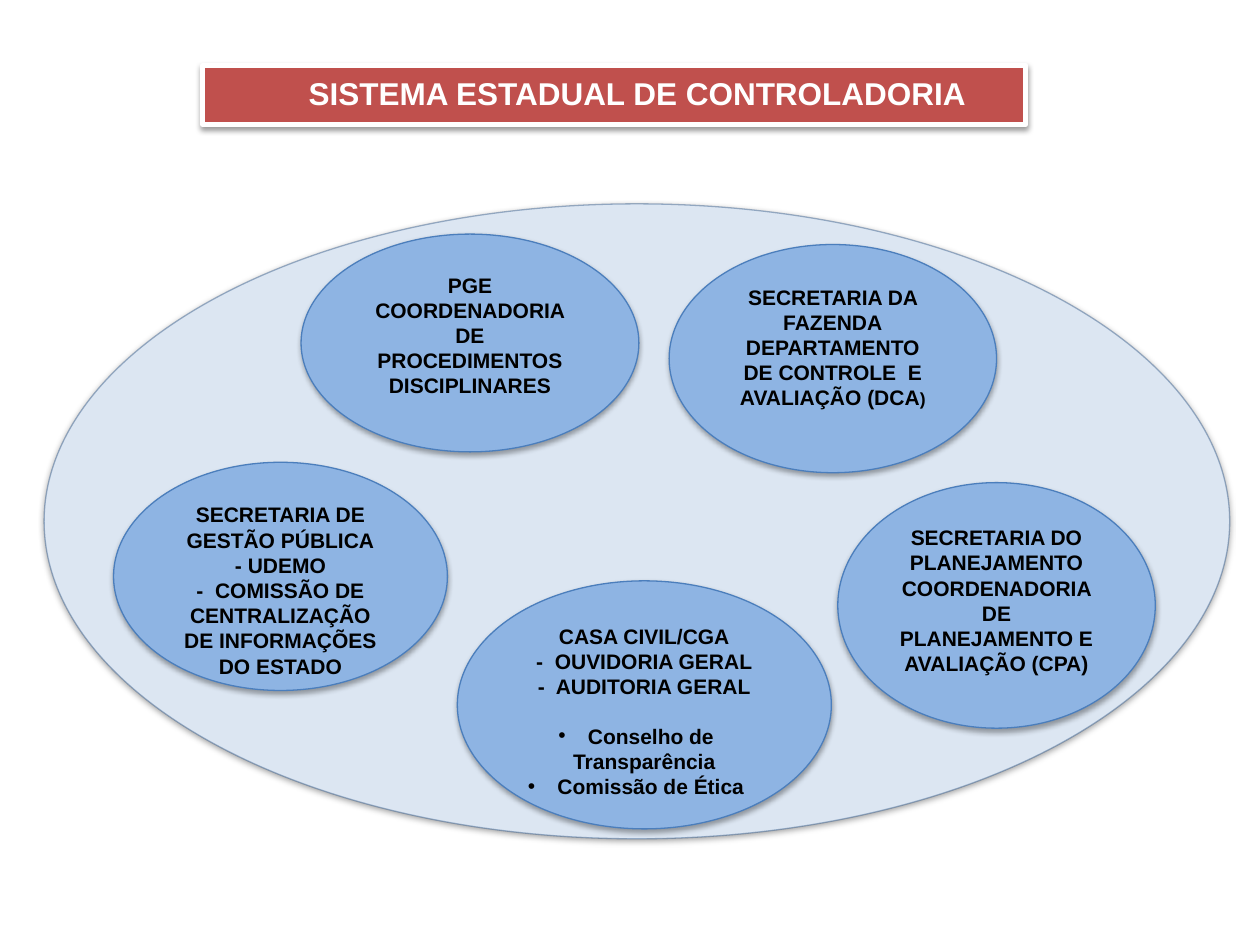
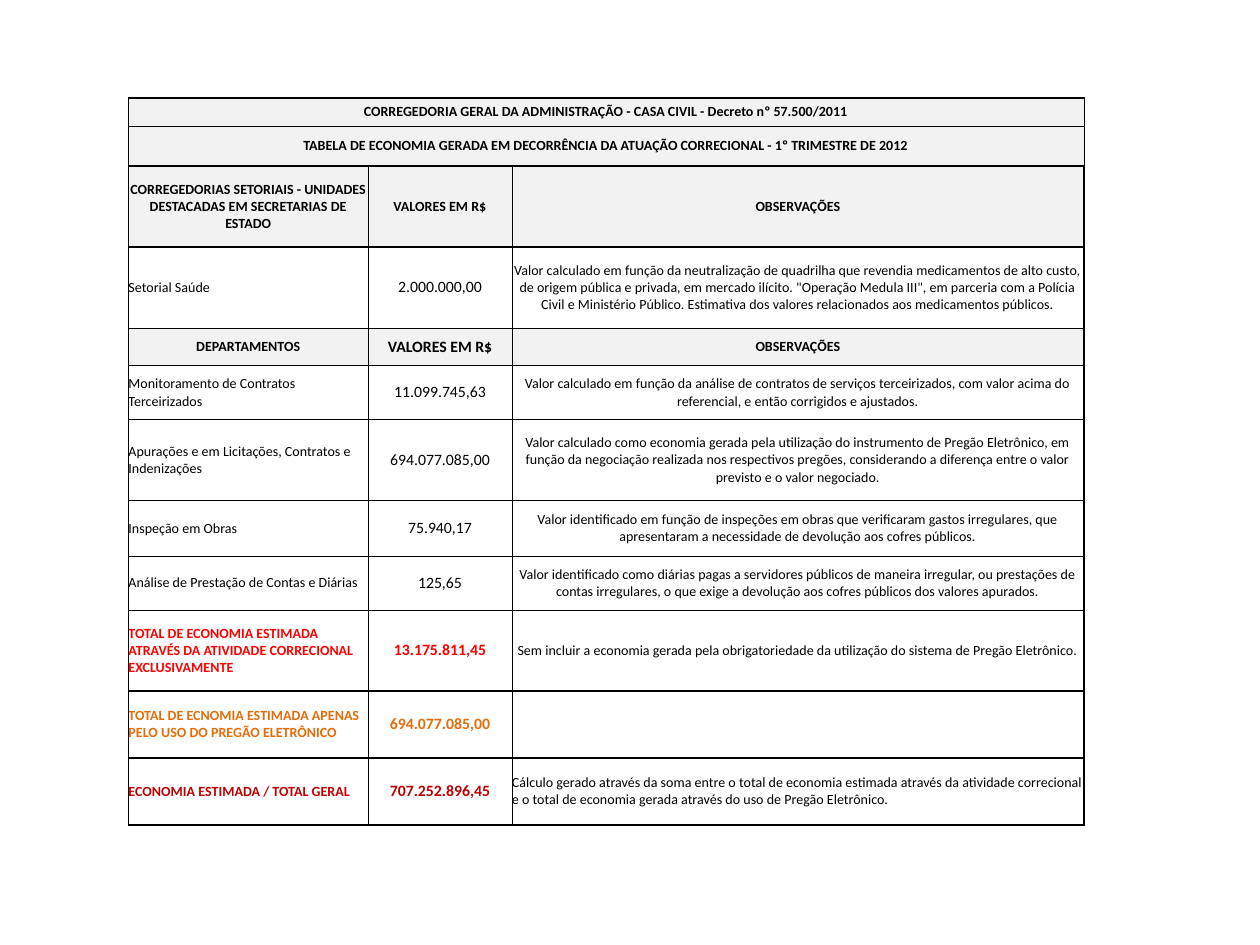
from dataclasses import dataclass
from typing import Any, Optional

from pptx import Presentation
from pptx import util as u
from pptx.dml.color import RGBColor
from pptx.enum import shapes, text
from pptx.oxml.ns import qn
from lxml import etree

BLACK, WHITE, RED = "000000", "FFFFFF", "C0504D"
PALE_BLUE, MID_BLUE, EDGE_BLUE, NAVY = "DCE6F2", "8EB4E3", "4B7EBC", "1F497D"
HEADER_GREY = "F2F2F2"
CENTER, LEFT = text.PP_ALIGN.CENTER, text.PP_ALIGN.LEFT
TOP, MIDDLE = text.MSO_ANCHOR.TOP, text.MSO_ANCHOR.MIDDLE
ARIAL_BOLD = {"name": "Arial", "size": u.Pt(12), "bold": True}
CALIBRI = {"name": "Calibri", "size": u.Pt(8), "bold": False}
BULLET = "•"


@dataclass
class Box:
    """Preset shape; lengths in centimetres, line width in points."""
    left: float
    top: float
    width: float
    height: float
    fill: str = MID_BLUE
    line: str = EDGE_BLUE
    line_width: float = 0.75
    line_alpha: int = 100
    shadow_alpha: int = 35
    kind: Any = shapes.MSO_SHAPE.OVAL


@dataclass
class Organ:
    box: Box
    lines: list[str]
    closing: str = ""  # smaller text that ends the last line


@dataclass
class Row:
    height: float
    texts: list[str]
    rule_below: float = 0.5
    header: bool = False
    color: str = BLACK
    value_size: int = 9
    note_align: Any = CENTER

    @property
    def strong(self) -> bool:
        return self.header or self.color != BLACK


# Shared helpers
def rgb(value: str) -> RGBColor:
    return RGBColor.from_string(value)


def apply(target: Any, formats: dict[str, Any]) -> None:
    for name, value in formats.items():
        setattr(target, name, value)


def add_element(parent: Any, tag: str, **attributes: Any) -> Any:
    return etree.SubElement(parent, qn(tag), {k: str(v) for k, v in attributes.items()})


def add_run(paragraph: Any, words: str, formats: dict[str, Any], color: str) -> None:
    run = paragraph.add_run()
    run.text = words
    apply(run.font, formats)
    run.font.color.rgb = rgb(color)


def add_shadow(shape: Any, alpha: int) -> None:
    shape.shadow.inherit = False
    effects = shape._element.spPr.find(qn("a:effectLst"))
    shadow = add_element(effects, "a:outerShdw", blurRad=u.Pt(3.1), dist=u.Pt(1.7),
                         dir=5400000, rotWithShape=0)
    add_element(add_element(shadow, "a:srgbClr", val=BLACK), "a:alpha", val=alpha * 1000)


def draw_box(slide: Any, box: Box) -> Any:
    lengths = (u.Cm(n) for n in (box.left, box.top, box.width, box.height))
    shape = slide.shapes.add_shape(box.kind, *lengths)
    shape.fill.solid()
    shape.fill.fore_color.rgb = rgb(box.fill)
    shape.line.color.rgb = rgb(box.line)
    shape.line.width = u.Pt(box.line_width)
    if box.line_alpha < 100:
        color = shape.line._ln.find(".//" + qn("a:srgbClr"))
        add_element(color, "a:alpha", val=box.line_alpha * 1000)
    add_shadow(shape, box.shadow_alpha)
    apply(shape.text_frame, {"word_wrap": True, "vertical_anchor": TOP})
    return shape


# Slide 1: control system
BANNER = Box(4.09, 1.32, 16.59, 1.19, RED, WHITE, 3, shadow_alpha=38,
             kind=shapes.MSO_SHAPE.RECTANGLE)
SYSTEM = Box(0.89, 4.11, 23.9, 12.8, PALE_BLUE, NAVY, line_alpha=40, shadow_alpha=38)
ORGANS = [
    Organ(Box(9.22, 11.71, 7.54, 5),
          ["CASA CIVIL/CGA", "-  OUVIDORIA GERAL", "-  AUDITORIA GERAL",
           BULLET + " Conselho de Transparência", BULLET + " Comissão de Ética"]),
    Organ(Box(2.29, 9.32, 6.73, 4.6),
          ["SECRETARIA DE GESTÃO PÚBLICA", "- UDEMO",
           "-  COMISSÃO DE CENTRALIZAÇÃO DE INFORMAÇÕES DO ESTADO"]),
    Organ(Box(6.07, 4.72, 6.81, 4.39),
          ["PGE", "COORDENADORIA DE PROCEDIMENTOS DISCIPLINARES"]),
    Organ(Box(16.89, 9.73, 6.4, 4.95),
          ["SECRETARIA DO PLANEJAMENTO",
           "COORDENADORIA DE PLANEJAMENTO E AVALIAÇÃO (CPA)"]),
    Organ(Box(13.49, 4.93, 6.6, 4.6),
          ["SECRETARIA DA FAZENDA", "DEPARTAMENTO DE CONTROLE  E AVALIAÇÃO (DCA"], ")"),
]


def draw_organ(slide: Any, organ: Organ) -> None:
    frame = draw_box(slide, organ.box).text_frame
    previous: Optional[str] = None
    for line in organ.lines:
        paragraph = frame.paragraphs[0] if previous is None else frame.add_paragraph()
        paragraph.alignment = CENTER
        if line.startswith(BULLET):
            if not previous.startswith(BULLET):
                paragraph.space_before = u.Pt(13.8)
            properties = paragraph._p.get_or_add_pPr()
            properties.set("marL", "0")
            properties.set("indent", str(-u.Cm(0.48)))
            add_element(properties, "a:buFont", typeface="Arial")
            add_element(properties, "a:buChar", char=BULLET)
        add_run(paragraph, line.removeprefix(BULLET), ARIAL_BOLD, BLACK)
        previous = line
    if organ.closing:
        add_run(paragraph, organ.closing, ARIAL_BOLD | {"size": u.Pt(10)}, BLACK)


def build_system_slide(slide: Any) -> None:
    draw_box(slide, SYSTEM)
    for organ in ORGANS:
        draw_organ(slide, organ)
    frame = draw_box(slide, BANNER).text_frame
    apply(frame, {"margin_left": u.Cm(1.18), "margin_top": u.Cm(0.17)})
    title = frame.paragraphs[0]
    title.alignment = CENTER
    add_run(title, "SISTEMA ESTADUAL DE CONTROLADORIA",
            ARIAL_BOLD | {"size": u.Pt(18)}, WHITE)


# Slide 2: savings table
TABLE_LEFT, TABLE_TOP = 2.59, 1.98
COLUMN_WIDTHS = [4.83, 2.9, 11.53]
ROWS = [
    Row(0.56, ["CORREGEDORIA GERAL DA ADMINISTRAÇÃO - CASA CIVIL - Decreto nº 57.500/2011"],
        header=True),
    Row(0.81, ["TABELA DE ECONOMIA GERADA EM DECORRÊNCIA DA ATUAÇÃO CORRECIONAL"
               " - 1º TRIMESTRE DE 2012"], 1, header=True),
    Row(1.63, ["CORREGEDORIAS SETORIAIS - UNIDADES DESTACADAS EM SECRETARIAS DE ESTADO",
               "VALORES EM R$", "OBSERVAÇÕES"], 1, header=True, value_size=8),
    Row(1.63, ["Setorial Saúde", "2.000.000,00",
               "Valor calculado em função da neutralização de quadrilha que revendia "
               "medicamentos de alto custo, de origem pública e privada, em mercado ilícito. "
               "\"Operação Medula III\", em parceria com a Polícia Civil e Ministério Público. "
               "Estimativa dos valores relacionados aos medicamentos públicos."]),
    Row(0.76, ["DEPARTAMENTOS", "VALORES EM R$", "OBSERVAÇÕES"], 1, header=True),
    Row(1.09, ["Monitoramento de Contratos Terceirizados", "11.099.745,63",
               "Valor calculado em função da análise de contratos de serviços terceirizados, "
               "com valor acima do referencial, e então corrigidos e ajustados."]),
    Row(1.63, ["Apurações e em Licitações, Contratos e Indenizações", "694.077.085,00",
               "Valor calculado como economia gerada pela utilização do instrumento de Pregão "
               "Eletrônico, em função da negociação realizada nos respectivos pregões, "
               "considerando a diferença entre o valor previsto e o valor negociado."]),
    Row(1.12, ["Inspeção em Obras", "75.940,17",
               "Valor identificado em função de inspeções em obras que verificaram gastos "
               "irregulares, que apresentaram a necessidade de devolução aos cofres públicos."]),
    Row(1.09, ["Análise de Prestação de Contas e Diárias", "125,65",
               "Valor identificado como diárias pagas a servidores públicos de maneira "
               "irregular, ou prestações de contas irregulares, o que exige a devolução aos "
               "cofres públicos dos valores apurados."]),
    Row(1.63, ["TOTAL DE ECONOMIA ESTIMADA ATRAVÉS DA ATIVIDADE CORRECIONAL EXCLUSIVAMENTE",
               "13.175.811,45",
               "Sem incluir a economia gerada pela obrigatoriedade da utilização do sistema "
               "de Pregão Eletrônico."], 1, color="FF0000"),
    Row(1.35, ["TOTAL DE ECNOMIA ESTIMADA APENAS PELO USO DO PREGÃO ELETRÔNICO",
               "694.077.085,00", ""], 1, color="E46D0A"),
    Row(1.35, ["ECONOMIA ESTIMADA / TOTAL GERAL", "707.252.896,45",
               "Cálculo gerado através da soma entre o total de economia estimada através da "
               "atividade correcional e o total de economia gerada através do uso de Pregão "
               "Eletrônico."], 1, color="C00000", note_align=LEFT),
]


def format_cell(cell: Any, header: bool, borders: dict[str, float]) -> None:
    apply(cell, {"vertical_anchor": MIDDLE, "margin_left": 0, "margin_right": 0,
                 "margin_top": 0, "margin_bottom": 0})
    properties = cell._tc.get_or_add_tcPr()
    for side, width in borders.items():
        line = add_element(properties, f"a:ln{side}", w=u.Pt(width))
        add_element(add_element(line, "a:solidFill"), "a:srgbClr", val=BLACK)
    if header:
        cell.fill.solid()
        cell.fill.fore_color.rgb = rgb(HEADER_GREY)
    else:
        cell.fill.background()


def write_cell(cell: Any, row: Row, column: int) -> None:
    paragraph = cell.text_frame.paragraphs[0]
    note = column == 2
    if note:
        paragraph.alignment = row.note_align
    else:
        paragraph.alignment = CENTER if row.header or column == 1 else LEFT
    formats = CALIBRI | {"bold": row.header or (row.strong and not note)}
    if column == 1:
        formats["size"] = u.Pt(row.value_size)
    if row.texts[column]:
        add_run(paragraph, row.texts[column], formats, BLACK if note else row.color)


def build_savings_slide(slide: Any) -> None:
    last = len(COLUMN_WIDTHS) - 1
    table = slide.shapes.add_table(
        len(ROWS), len(COLUMN_WIDTHS), u.Cm(TABLE_LEFT), u.Cm(TABLE_TOP),
        u.Cm(sum(COLUMN_WIDTHS)), u.Cm(sum(row.height for row in ROWS))).table
    apply(table, {"first_row": False, "horz_banding": False})
    for column, width in zip(table.columns, COLUMN_WIDTHS):
        column.width = u.Cm(width)
    rule_above = 1.0
    for index, row in enumerate(ROWS):
        table.rows[index].height = u.Cm(row.height)
        for column in range(last + 1):
            borders = {"L": 1 if column == 0 else 0.5, "R": 1 if column == last else 0.5,
                       "T": rule_above, "B": row.rule_below}
            format_cell(table.cell(index, column), row.header, borders)
        if len(row.texts) == 1:
            table.cell(index, 0).merge(table.cell(index, last))
        for column in range(len(row.texts)):
            write_cell(table.cell(index, column), row, column)
        rule_above = row.rule_below


def main() -> None:
    presentation = Presentation()
    apply(presentation, {"slide_width": u.Cm(25.4), "slide_height": u.Cm(19.05)})
    for build in (build_system_slide, build_savings_slide):
        build(presentation.slides.add_slide(presentation.slide_layouts[6]))
    presentation.save("out.pptx")


if __name__ == "__main__":
    main()
